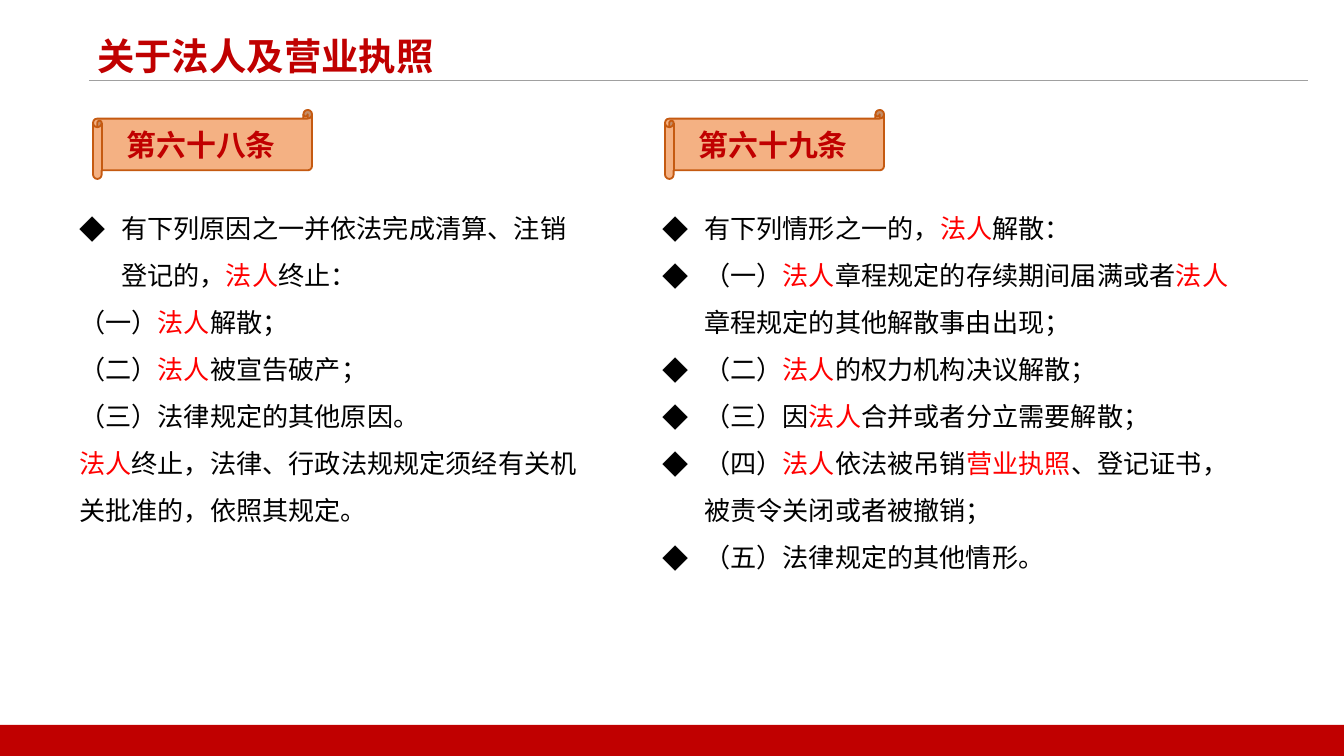
from lxml.etree import SubElement
from pptx import Presentation
from pptx.dml.color import RGBColor
from pptx.enum.shapes import MSO_CONNECTOR, MSO_SHAPE
from pptx.enum.text import MSO_ANCHOR, PP_ALIGN
from pptx.oxml.ns import qn
from pptx.util import Pt

SCALE = 914400 / 134.4
WIDE, HIGH = 1344, 756
FONT = "Noto Sans CJK SC"
RED = RGBColor(0xC0, 0x00, 0x00)
BRIGHT = RGBColor(0xFF, 0x00, 0x00)
BLACK = RGBColor(0x00, 0x00, 0x00)
WHITE = RGBColor(0xFF, 0xFF, 0xFF)
GRAY = RGBColor(0xA0, 0xA0, 0xA0)
PEACH = RGBColor(0xF4, 0xB1, 0x83)
BROWN = RGBColor(0xC5, 0x5A, 0x11)

LEFT = [
    (True, "有下列原因之一并依法完成清算、注销登记的，|法人|终止："),
    (False, "（一）|法人|解散；"),
    (False, "（二）|法人|被宣告破产；"),
    (False, "（三）法律规定的其他原因。"),
    (False, "|法人|终止，法律、行政法规规定须经有关机关批准的，依照其规定。"),
]
RIGHT = [
    (True, "有下列情形之一的，|法人|解散："),
    (True, "（一）|法人|章程规定的存续期间届满或者|法人|章程规定的其他解散事由出现；"),
    (True, "（二）|法人|的权力机构决议解散；"),
    (True, "（三）因|法人|合并或者分立需要解散；"),
    (True, "（四）|法人|依法被吊销|营业执照|、登记证书，被责令关闭或者被撤销；"),
    (True, "（五）法律规定的其他情形。"),
]


def px(num):
    """Turn whole pixels into EMU."""
    return round(num * SCALE)


def add_run(para, text, size, color, bold=False):
    """Add one styled run to a paragraph."""
    run = para.add_run()
    run.text = text
    font = run.font
    font.size = Pt(size)
    font.bold = bold
    font.color.rgb = color
    font.name = FONT
    SubElement(font._element, qn("a:ea"), typeface=FONT)


def add_bullet(para):
    """Give a paragraph a diamond bullet with a hanging indent."""
    props = para._p.get_or_add_pPr()
    props.set("marL", str(px(42)))
    props.set("indent", str(-px(42)))
    SubElement(props, qn("a:buFont"), typeface=FONT)
    SubElement(props, qn("a:buChar"), char="◆")


def add_text(slide, box):
    """Add an empty wrapping text box and return its frame."""
    frame = slide.shapes.add_textbox(*map(px, box)).text_frame
    frame.word_wrap = True
    return frame


def add_block(slide, kind, box, fill):
    """Add a filled shape without line or shadow."""
    block = slide.shapes.add_shape(kind, *map(px, box))
    block.shadow.inherit = False
    block.fill.solid()
    block.fill.fore_color.rgb = fill
    block.line.fill.background()
    return block


def add_head(slide, box, text):
    """Place the slide title and the rule beneath it."""
    left, top, wide, high = box
    frame = add_text(slide, (left, top, 420, high))
    add_run(frame.paragraphs[0], text, 20, RED, True)
    level = px(top + 54)
    rule = slide.shapes.add_connector(
        MSO_CONNECTOR.STRAIGHT, px(left + 5), level, px(left + wide), level)
    rule.line.color.rgb = GRAY
    rule.line.width = Pt(0.5)
    SubElement(rule._element.spPr, qn("a:effectLst"))


def add_scroll(slide, box, text):
    """Place a scroll that names an article."""
    scroll = add_block(slide, MSO_SHAPE.HORIZONTAL_SCROLL, box, PEACH)
    scroll.line.color.rgb = BROWN
    scroll.line.width = Pt(1)
    frame = scroll.text_frame
    frame.vertical_anchor = MSO_ANCHOR.MIDDLE
    para = frame.paragraphs[0]
    para.alignment = PP_ALIGN.CENTER
    add_run(para, text, 16, RED, True)


def add_panel(slide, box, inset, name, lines):
    """Place an article: its scroll above, its clauses below."""
    left, top, wide, high = box
    add_scroll(slide, (left + inset, top, 219, 69), name)
    frame = add_text(slide, (left, top + 80, wide, high - 80))
    for index, (mark, line) in enumerate(lines):
        para = frame.add_paragraph() if index else frame.paragraphs[0]
        para.line_spacing = 1.5
        if mark:
            add_bullet(para)
        for turn, part in enumerate(line.split("|")):
            if part:
                add_run(para, part, 14, BRIGHT if turn % 2 else BLACK)


def main():
    """Build and save the slide."""
    deck = Presentation()
    deck.slide_width, deck.slide_height = px(WIDE), px(HIGH)
    slide = deck.slides.add_slide(deck.slide_layouts[6])
    slide.background.fill.solid()
    slide.background.fill.fore_color.rgb = WHITE
    add_block(slide, MSO_SHAPE.RECTANGLE, (0, 725, WIDE, 31), RED)
    add_head(slide, (84, 27, 1224, 68), "关于法人及营业执照")
    add_panel(slide, (66, 110, 525, 419), 27, "第六十八条 ", LEFT)
    add_panel(slide, (649, 110, 614, 468), 16, "第六十九条 ", RIGHT)
    deck.save("out.pptx")


if __name__ == "__main__":
    main()
